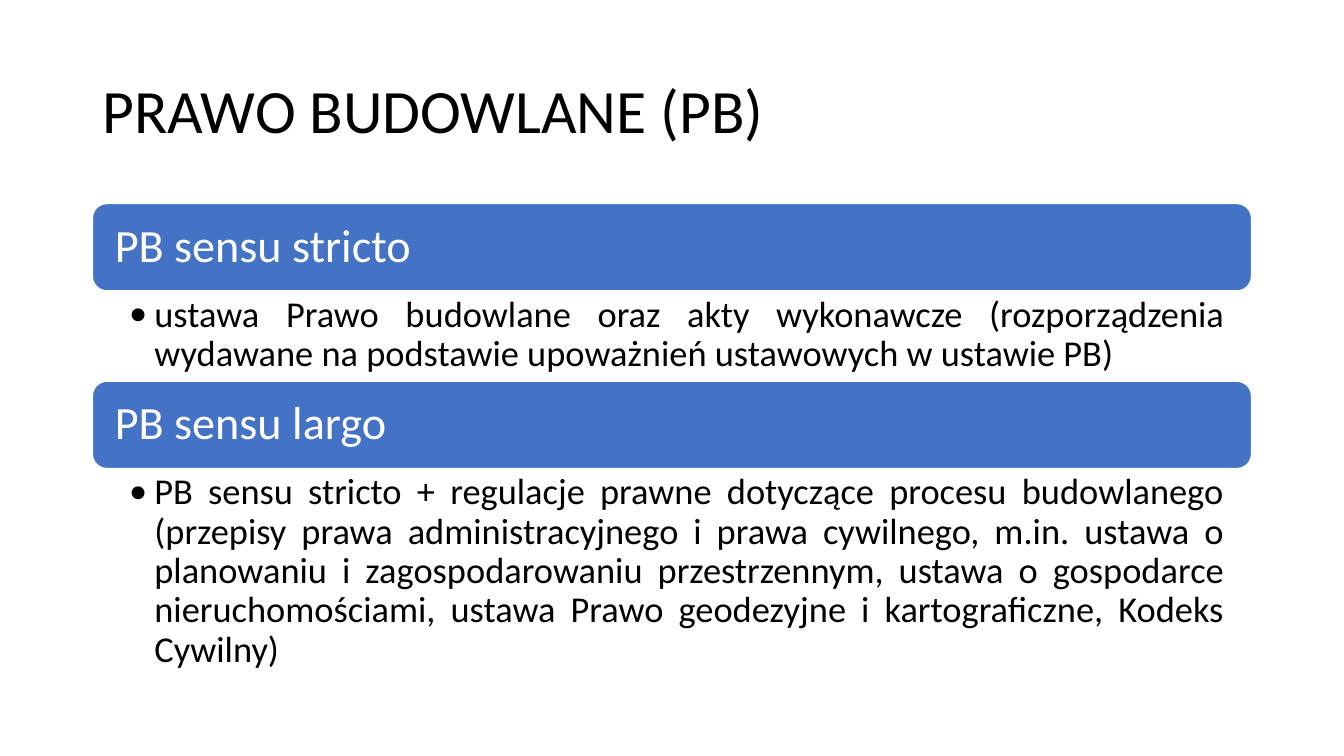
from lxml import etree
from pptx import Presentation
from pptx.dml.color import RGBColor
from pptx.enum.shapes import MSO_SHAPE
from pptx.enum.text import MSO_ANCHOR, MSO_AUTO_SIZE, PP_ALIGN
from pptx.oxml.ns import qn
from pptx.util import Pt

ROUND = MSO_SHAPE.ROUNDED_RECTANGLE
TOP, MIDDLE = MSO_ANCHOR.TOP, MSO_ANCHOR.MIDDLE
LEFT, JUSTIFY = PP_ALIGN.LEFT, PP_ALIGN.JUSTIFY
FIXED = MSO_AUTO_SIZE.NONE

COLORS = {"bar": "4472C4", "white": "FFFFFF", "text": "000000"}
FONT = "Calibri"
EDGE, WIDTH = 66, 828
TITLE_BOX = (EDGE, 28.75, WIDTH, 104.4)
LIST_TOP, BAR_HIGH = 145.4, 62.4

TITLE = "PRAWO BUDOWLANE (PB)"
# heading, body, body height
PARTS = [
    ("PB sensu stricto",
     "ustawa Prawo budowlane oraz akty wykonawcze (rozporządzenia wydawane na "
     "podstawie upoważnień ustawowych w ustawie PB)", 64.5),
    ("PB sensu largo",
     "PB sensu stricto + regulacje prawne dotyczące procesu budowlanego "
     "(przepisy prawa administracyjnego i prawa cywilnego, m.in. ustawa o "
     "planowaniu i zagospodarowaniu przestrzennym, ustawa o gospodarce "
     "nieruchomościami, ustawa Prawo geodezyjne i kartograficzne, Kodeks "
     "Cywilny)", 150.5),
]


def color(name):
    return RGBColor.from_string(COLORS[name])


def apply(item, values):
    for name, value in values.items():
        setattr(item, name, value)


def write(shape, text, size, tint, anchor, align, pads):
    """Fill a shape with one paragraph; pads are left, top, right, bottom."""
    frame = shape.text_frame
    left, top, right, bottom = map(Pt, pads)
    apply(frame, {"text": text, "word_wrap": True, "auto_size": FIXED,
                  "vertical_anchor": anchor, "margin_left": left,
                  "margin_top": top, "margin_right": right,
                  "margin_bottom": bottom})
    par = frame.paragraphs[0]
    apply(par, {"alignment": align, "line_spacing": 0.9})
    font = par.runs[0].font
    apply(font, {"name": FONT, "size": Pt(size)})
    font.color.rgb = color(tint)
    return par


def add_bullet(par, indent):
    par.level = 1
    props = par._p.get_or_add_pPr()
    props.set("marL", str(Pt(indent)))
    props.set("indent", str(-Pt(indent)))
    face = etree.SubElement(props, qn("a:buFont"))
    face.set("typeface", FONT)
    mark = etree.SubElement(props, qn("a:buChar"))
    mark.set("char", "•")


def add_title(slide, box):
    title = slide.shapes.title
    left, top, width, height = map(Pt, box)
    apply(title, {"left": left, "top": top, "width": width, "height": height})
    write(title, TITLE, 44, "text", MIDDLE, LEFT, (7.2, 3.6, 7.2, 3.6))


def add_bar(shapes, box, text):
    bar = shapes.add_shape(ROUND, *map(Pt, box))
    bar.shadow.inherit = False
    bar.fill.solid()
    bar.fill.fore_color.rgb = color("bar")
    bar.line.color.rgb = color("white")
    bar.line.width = Pt(1)
    write(bar, text, 33, "white", MIDDLE, LEFT, (13, 13, 13, 13))


def add_body(shapes, box, text):
    body = shapes.add_textbox(*map(Pt, box))
    par = write(body, text, 26, "text", TOP, JUSTIFY, (26.3, 3.6, 18.7, 3.6))
    add_bullet(par, 18)


def add_list(slide, left, top, width):
    """Stack each heading bar and its body without gaps."""
    shapes = slide.shapes.add_group_shape().shapes
    for head, text, high in PARTS:
        add_bar(shapes, (left, top, width, BAR_HIGH), head)
        top += BAR_HIGH
        add_body(shapes, (left, top, width, high), text)
        top += high


def main():
    deck = Presentation()
    apply(deck, {"slide_width": Pt(960), "slide_height": Pt(540)})
    slide = deck.slides.add_slide(deck.slide_layouts[5])
    add_title(slide, TITLE_BOX)
    add_list(slide, EDGE, LIST_TOP, WIDTH)
    deck.save("out.pptx")


if __name__ == "__main__":
    main()
